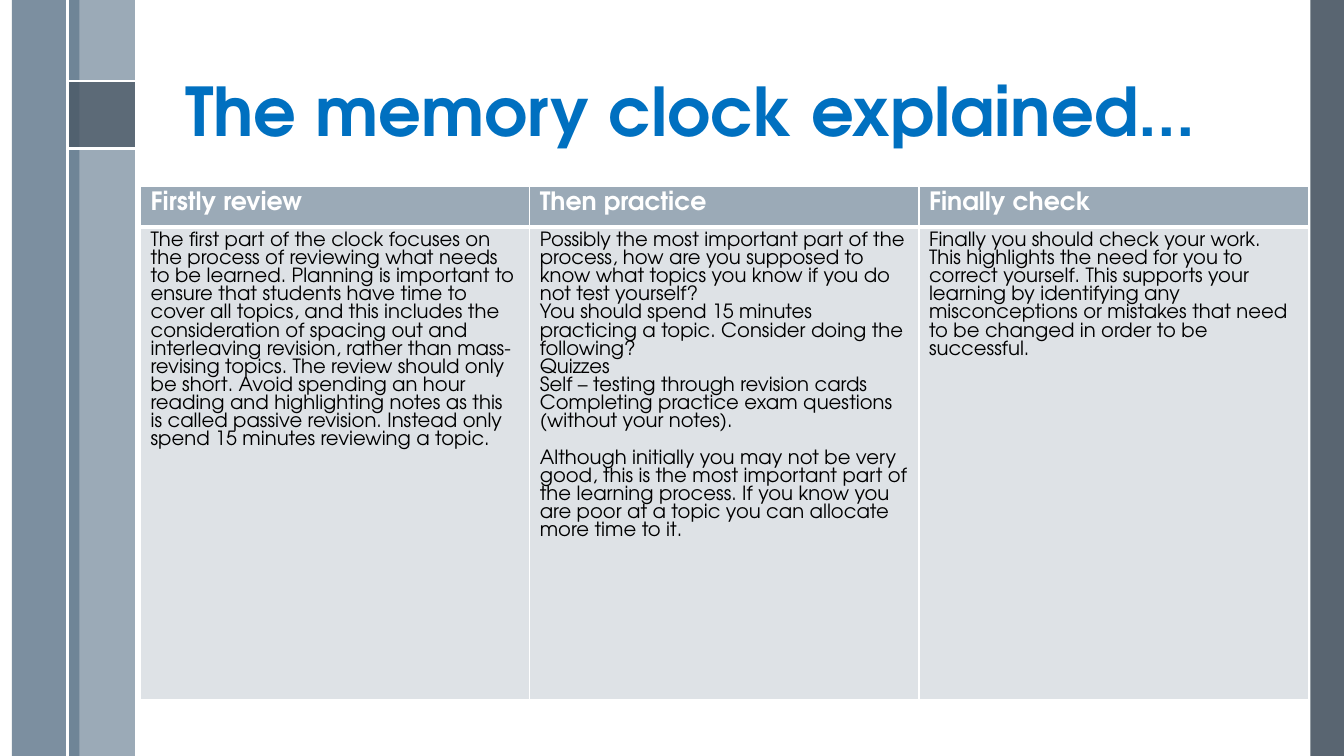
from lxml.etree import SubElement
from pptx import Presentation
from pptx.dml.color import RGBColor
from pptx.enum.shapes import MSO_CONNECTOR, MSO_SHAPE
from pptx.enum.text import MSO_ANCHOR
from pptx.oxml.ns import qn
from pptx.util import Pt

FONT = "TeX Gyre Adventor"
WHITE = RGBColor(0xFF, 0xFF, 0xFF)
BLACK = RGBColor(0x00, 0x00, 0x00)
BLUE = RGBColor(0x00, 0x70, 0xC0)
SLATE = RGBColor(0x47, 0x55, 0x62)
STEEL = RGBColor(0x6A, 0x80, 0x93)
MIST = RGBColor(0x9B, 0xAA, 0xB7)
PALE = RGBColor(0xDE, 0xE2, 0xE6)

COLUMNS = [
    ("Firstly review", [
        "The first part of the clock focuses on the process of reviewing what needs to be "
        "learned. Planning is important to ensure that students have time to cover all topics, "
        "and this includes the consideration of spacing out and interleaving revision, rather "
        "than mass-revising topics. The review should only be short. Avoid spending an hour "
        "reading and highlighting notes as this is called passive revision. Instead only spend "
        "15 minutes reviewing a topic."]),
    ("Then practice", [
        "Possibly the most important part of the process, how are you supposed to know what "
        "topics you know if you do not test yourself?",
        "You should spend 15 minutes practicing a topic. Consider doing the following?",
        "Quizzes",
        "Self – testing through revision cards",
        "Completing practice exam questions (without your notes).",
        "Although initially you may not be very good, this is the most important part of the "
        "learning process. If you know you are poor at a topic you can allocate more time to it."]),
    ("Finally check", [
        "Finally you should check your work. This highlights the need for you to correct "
        "yourself. This supports your learning by identifying any misconceptions or mistakes "
        "that need to be changed in order to be successful."]),
]


def write(tf, paragraphs, size, color, bold=False, line_spacing=None):
    """Fill a text frame with formatted paragraphs and return them."""
    tf.word_wrap = True
    for i, text in enumerate(paragraphs):
        p = tf.add_paragraph() if i else tf.paragraphs[0]
        if line_spacing:
            p.line_spacing = line_spacing
        r = p.add_run()
        r.text = text
        r.font.name = FONT
        r.font.size = Pt(size)
        r.font.bold = bold
        r.font.color.rgb = color
    return tf.paragraphs


def add_band(s, x, y, w, h, color, opacity=100):
    """Add a borderless rectangle with the given opacity in percent."""
    sp = s.shapes.add_shape(MSO_SHAPE.RECTANGLE, Pt(x), Pt(y), Pt(w), Pt(h))
    sp.shadow.inherit = False
    sp.line.fill.background()
    sp.fill.solid()
    sp.fill.fore_color.rgb = color
    if opacity < 100:
        clr = sp.fill._xPr.find(qn("a:solidFill"))[0]
        SubElement(clr, qn("a:alpha"), val=str(opacity * 1000))


def add_rule(s, x1, y1, x2, y2):
    """Add a thin white line."""
    cx = s.shapes.add_connector(MSO_CONNECTOR.STRAIGHT, Pt(x1), Pt(y1), Pt(x2), Pt(y2))
    cx.line.color.rgb = WHITE
    cx.line.width = Pt(1.5)
    SubElement(cx._element.spPr, qn("a:effectLst"))


def add_title(s, text):
    """Add the bottom-anchored slide title."""
    tf = s.shapes.add_textbox(Pt(125.3), Pt(13.7), Pt(770.4), Pt(97.9)).text_frame
    tf.vertical_anchor = MSO_ANCHOR.BOTTOM
    write(tf, [text], 48, BLUE, bold=True, line_spacing=0.9)


def style_cell(cell, color, **widths):
    """Give a cell white borders and a solid fill."""
    tcPr = cell._tc.get_or_add_tcPr()
    for side in "LRTB":
        ln = SubElement(tcPr, qn("a:ln" + side), w=str(Pt(widths.get(side, 1))))
        fill = SubElement(ln, qn("a:solidFill"))
        SubElement(fill, qn("a:srgbClr"), val=str(WHITE))
    cell.fill.solid()
    cell.fill.fore_color.rgb = color


def add_steps_table(s, columns):
    """Add the table with one heading and one text cell per step."""
    table = s.shapes.add_table(2, len(columns), Pt(100.4), Pt(133.2), Pt(834), Pt(364.6)).table
    table.rows[0].height = Pt(26.6)
    table.rows[1].height = Pt(338)
    for i, (heading, body) in enumerate(columns):
        table.columns[i].width = Pt(278)
        head, cell = table.cell(0, i), table.cell(1, i)
        style_cell(head, MIST, B=3)
        style_cell(cell, PALE, T=3)
        write(head.text_frame, [heading], 18, WHITE, bold=True)
        paragraphs = write(cell.text_frame, body, 14, BLACK)
        if len(paragraphs) > 1:
            paragraphs[-1].space_before = Pt(13)


def main():
    """Build the slide and save it."""
    prs = Presentation()
    prs.slide_width, prs.slide_height = Pt(960), Pt(540)
    s = prs.slides.add_slide(prs.slide_layouts[6])
    add_band(s, 936, 0, 24, 540, SLATE, 90)
    add_band(s, 48.2, 0, 48.2, 540, MIST)
    add_band(s, 8.6, 0, 48.2, 540, STEEL, 88)
    add_band(s, 48.2, 58.1, 48.2, 48, SLATE, 75)
    for y in (58.1, 106.1):
        add_rule(s, 48.2, y, 96.4, y)
    add_rule(s, 48.2, 0, 48.2, 540)
    add_title(s, "The memory clock explained...")
    add_steps_table(s, COLUMNS)
    prs.save("out.pptx")


if __name__ == "__main__":
    main()
